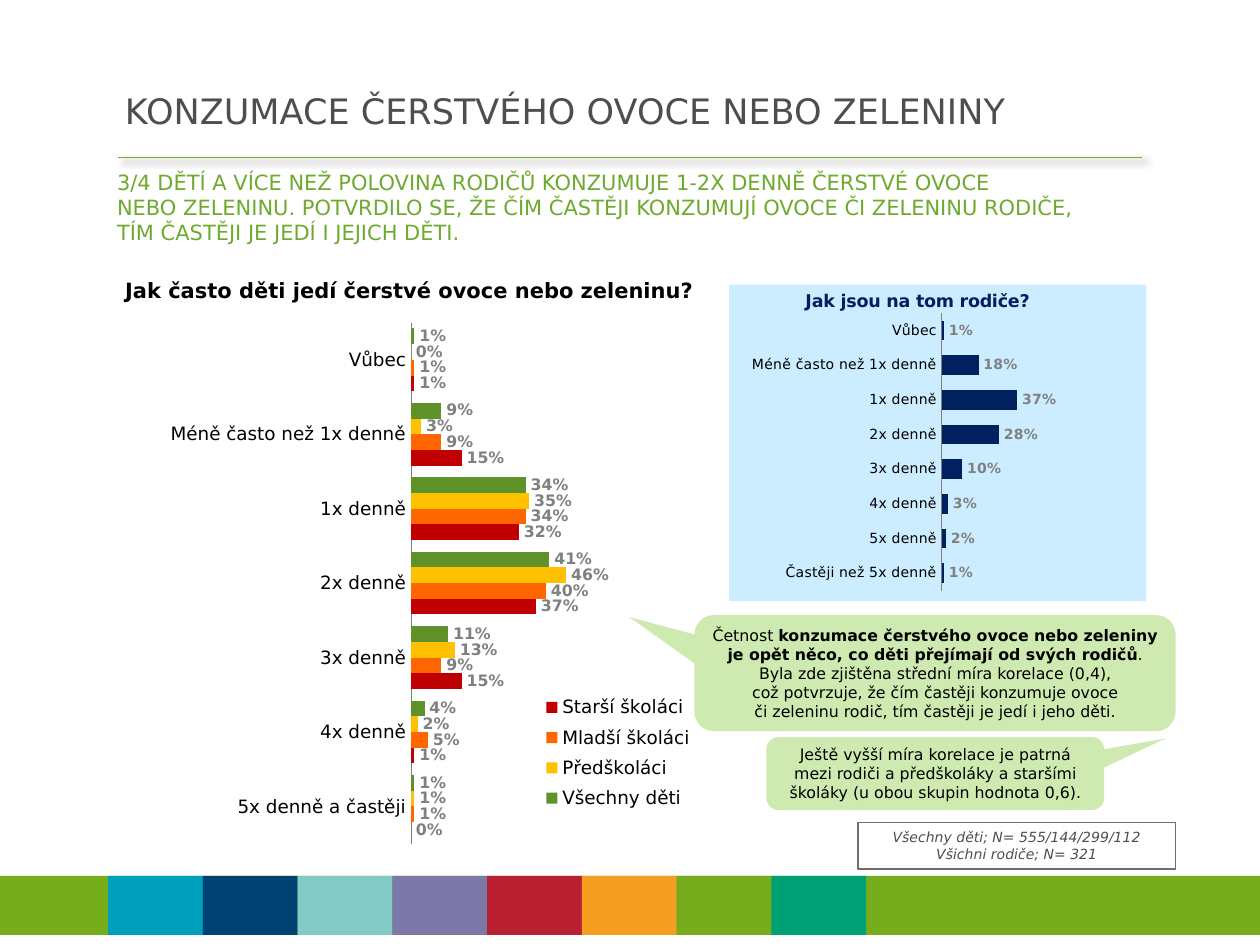
from lxml import etree
from pptx import Presentation
from pptx import util as u
from pptx.chart import data as cd
from pptx.dml.color import RGBColor
from pptx.enum import chart as ce, shapes, text
from pptx.oxml import parse_xml
from pptx.oxml.ns import nsdecls, qn

FONT = "DejaVu Sans"
COLORS = {
    "band": "77AD1C", "title": "4E4E4E", "subtitle": "6EAA2E", "black": "000000",
    "bubble": "CEEAB0", "frame": "6E6E6E", "value": "808080",
    "parents": "002060", "panel": "CCECFF",
}
rgb = {name: RGBColor.from_string(code) for name, code in COLORS.items()}


def style(font, size, color, bold=False, italic=False):
    font.name, font.size, font.bold, font.italic = FONT, u.Pt(size), bold, italic
    font.color.rgb = color


def place(part, index, x, y, w=None, h=None, inner=False):
    """Give a chart part a manual layout in fractions of the chart."""
    for old in part.findall(qn("c:layout")):
        part.remove(old)
    layout = parse_xml(f"<c:layout {nsdecls('c')}><c:manualLayout/></c:layout>")
    settings = [("layoutTarget", "inner")] if inner else []
    settings += [("xMode", "edge"), ("yMode", "edge"), ("x", x), ("y", y), ("w", w), ("h", h)]
    for tag, value in settings:
        if value is not None:
            etree.SubElement(layout[0], qn("c:" + tag)).set("val", str(value))
    part.insert(index, layout)


prs = Presentation()
prs.slide_width, prs.slide_height = u.Cm(25.4), u.Cm(19.05)
slide = prs.slides.add_slide(prs.slide_layouts[6])

# Rule under the title, with a soft shadow
rule = slide.shapes.add_connector(
    shapes.MSO_CONNECTOR.STRAIGHT, u.Cm(2.38), u.Cm(3.17), u.Cm(23.02), u.Cm(3.17))
rule._element.remove(rule._element.find(qn("p:style")))
rule.line.color.rgb = rgb["band"]
rule.line.width = u.Pt(0.75)
rule._element.spPr.append(parse_xml(
    f'<a:effectLst {nsdecls("a")}><a:outerShdw blurRad="{u.Pt(4)}" dist="{u.Pt(3)}" '
    'dir="2700000" rotWithShape="0"><a:srgbClr val="000000"><a:alpha val="40000"/>'
    '</a:srgbClr></a:outerShdw></a:effectLst>'))

# Footer band with coloured tiles
tile_colors = ["009FBB", "004272", "83C9C6", "7C78A8", "B92032", "F49F22", "77AD1C", "00A275"]
tiles = [(0, 25.4, COLORS["band"])]
tiles += [(2.18 + 1.91 * i, 1.91, color) for i, color in enumerate(tile_colors)]
for left, width, color in tiles:
    tile = slide.shapes.add_shape(
        shapes.MSO_SHAPE.RECTANGLE, u.Cm(left), u.Cm(17.66), u.Cm(width), u.Cm(1.19))
    tile.shadow.inherit = False
    tile.fill.solid()
    tile.fill.fore_color.rgb = RGBColor.from_string(color)
    tile.line.fill.background()

# Title and main message
headings = [
    ("KONZUMACE ČERSTVÉHO OVOCE NEBO ZELENINY",
     (2.27, 1.57, 22.53, 1.3), 20, "title", text.MSO_ANCHOR.MIDDLE),
    ("3/4 DĚTÍ A VÍCE NEŽ POLOVINA RODIČŮ KONZUMUJE 1-2X DENNĚ ČERSTVÉ OVOCE\v"
     "NEBO ZELENINU. POTVRDILO SE, ŽE ČÍM ČASTĚJI KONZUMUJÍ OVOCE ČI ZELENINU RODIČE,\v"
     "TÍM ČASTĚJI JE JEDÍ I JEJICH DĚTI.",
     (2.11, 3.29, 22.4, 1.4), 12, "subtitle", text.MSO_ANCHOR.TOP),
]
for wording, box, size, color, anchor in headings:
    heading = slide.shapes.add_textbox(*map(u.Cm, box)).text_frame
    heading.word_wrap = True
    heading.vertical_anchor = anchor
    heading.text = wording
    for run in heading.paragraphs[0].runs:
        style(run.font, size, rgb[color])

# Charts: children by age group, and their parents
frequencies = ["Vůbec", "Méně často než 1x denně", "1x denně", "2x denně", "3x denně", "4x denně"]
charts = [
    dict(box=(0, 5.29, 15.29, 11.91), title="Jak často děti jedí čerstvé ovoce nebo zeleninu?",
         title_size=12, title_color="black", title_at=(0.16, 0.017),
         plot=(0.542, 0.102, 0.445, 0.882), cat_size=10.5, value_size=9,
         cats=frequencies + ["5x denně a častěji"], legend=(0.72, 0.72, 0.19, 0.22), panel=None,
         series=[
             ("Všechny děti", "5F9329", (0.01, 0.09, 0.34, 0.41, 0.11, 0.04, 0.01)),
             ("Předškoláci", "FFC000", (0, 0.03, 0.35, 0.46, 0.13, 0.02, 0.01)),
             ("Mladší školáci", "FF6600", (0.01, 0.09, 0.34, 0.4, 0.09, 0.05, 0.01)),
             ("Starší školáci", "C00000", (0.01, 0.15, 0.32, 0.37, 0.15, 0.01, 0)),
         ]),
    dict(box=(14.7, 5.74, 8.41, 6.38), title="Jak jsou na tom rodiče?",
         title_size=10, title_color="parents", title_at=(0.175, 0.004),
         plot=(0.51, 0.09, 0.488, 0.877), cat_size=8, value_size=8,
         cats=frequencies + ["5x denně", "Častěji než 5x denně"], legend=None, panel="panel",
         series=[("Rodiče", COLORS["parents"],
                  (0.01, 0.18, 0.37, 0.28, 0.1, 0.03, 0.02, 0.01))]),
]
for item in charts:
    survey = cd.CategoryChartData(number_format="0%")
    survey.categories = item["cats"]
    for name, _, values in item["series"]:
        survey.add_series(name, values)
    chart = slide.shapes.add_chart(
        ce.XL_CHART_TYPE.BAR_CLUSTERED, *map(u.Cm, item["box"]), survey).chart
    style(chart.font, 18, rgb["black"])

    chart.has_title = True
    chart.chart_title.text_frame.text = item["title"]
    style(chart.chart_title.text_frame.paragraphs[0].runs[0].font,
          item["title_size"], rgb[item["title_color"]], bold=True)
    place(chart.chart_title._element, 1, *item["title_at"])
    place(chart._chartSpace.chart.plotArea, 0, *item["plot"], inner=True)

    answers, share = chart.category_axis, chart.value_axis
    answers.reverse_order = True
    answers.major_tick_mark = ce.XL_TICK_MARK.NONE
    answers.format.line.color.rgb = rgb["value"]
    answers.format.line.width = u.Pt(0.5)
    style(answers.tick_labels.font, item["cat_size"], rgb["black"])
    share.minimum_scale, share.maximum_scale = 0, 1
    share.has_major_gridlines = False
    share.visible = False

    bars = chart.plots[0]
    bars.gap_width, bars.overlap, bars.vary_by_categories = 75, 0, False
    for group, (_, color, _) in zip(bars.series, item["series"]):
        group.format.fill.solid()
        group.format.fill.fore_color.rgb = RGBColor.from_string(color)
        labels = group.data_labels
        labels.show_value = True
        labels.number_format, labels.number_format_is_linked = "0%", False
        labels.position = ce.XL_LABEL_POSITION.OUTSIDE_END
        style(labels.font, item["value_size"], rgb["value"], bold=True)

    chart.has_legend = item["legend"] is not None
    if chart.has_legend:
        chart.legend.position = ce.XL_LEGEND_POSITION.RIGHT
        chart.legend.include_in_layout = False
        style(chart.legend.font, 10.5, rgb["black"])
        place(chart.legend._element, 1, *item["legend"])
    if item["panel"]:
        chart._chartSpace.chart.addnext(parse_xml(
            f'<c:spPr {nsdecls("c", "a")}><a:solidFill><a:srgbClr val="{COLORS[item["panel"]]}"/>'
            '</a:solidFill><a:ln><a:noFill/></a:ln></c:spPr>'))

# Callouts and sample note; each paragraph is a list of (wording, bold) pieces
callout = shapes.MSO_SHAPE.ROUNDED_RECTANGULAR_CALLOUT
notes = [
    (callout, (14, 12.4, 9.7, 2.34), (-0.635, -0.482, 0.167), 9, [[
        ("Četnost ", False),
        ("konzumace čerstvého ovoce nebo zeleniny je opět něco, "
         "co děti přejímají od svých rodičů", True),
        (". Byla zde zjištěna střední míra korelace (0,4),\v"
         "což potvrzuje, že čím častěji konzumuje ovoce\v"
         "či zeleninu rodič, tím častěji je jedí i jeho děti.", False)]]),
    (shapes.MSO_SHAPE.RECTANGLE, (17.3, 16.58, 6.4, 0.94), (), 8, [
        [("Všechny děti; N= 555/144/299/112", False)], [("Všichni rodiče; N= 321", False)]]),
    (callout, (15.45, 14.86, 6.81, 1.47), (0.682, -0.482, 0.167), 9, [[
        ("Ještě vyšší míra korelace je patrná mezi rodiči a předškoláky a staršími "
         "školáky (u obou skupin hodnota 0,6).", False)]]),
]
for kind, box, adjustments, size, paragraphs in notes:
    note = slide.shapes.add_shape(kind, *map(u.Cm, box))
    note.shadow.inherit = False
    for i, value in enumerate(adjustments):
        note.adjustments[i] = value
    is_callout = kind == callout
    if is_callout:
        note.fill.solid()
        note.fill.fore_color.rgb = rgb["bubble"]
        note.line.fill.background()
    else:
        note.fill.background()
        note.line.color.rgb = rgb["frame"]
        note.line.width = u.Pt(0.75)
    frame = note.text_frame
    frame.word_wrap = True
    frame.vertical_anchor = text.MSO_ANCHOR.MIDDLE if is_callout else text.MSO_ANCHOR.TOP
    for i, pieces in enumerate(paragraphs):
        paragraph = frame.add_paragraph() if i else frame.paragraphs[0]
        paragraph.alignment = text.PP_ALIGN.CENTER
        for wording, bold in pieces:
            for j, line in enumerate(wording.split("\v")):
                if j:
                    paragraph.add_line_break()
                run = paragraph.add_run()
                run.text = line
                style(run.font, size, rgb["black" if is_callout else "title"],
                      bold=bold, italic=not is_callout)

prs.save("out.pptx")
